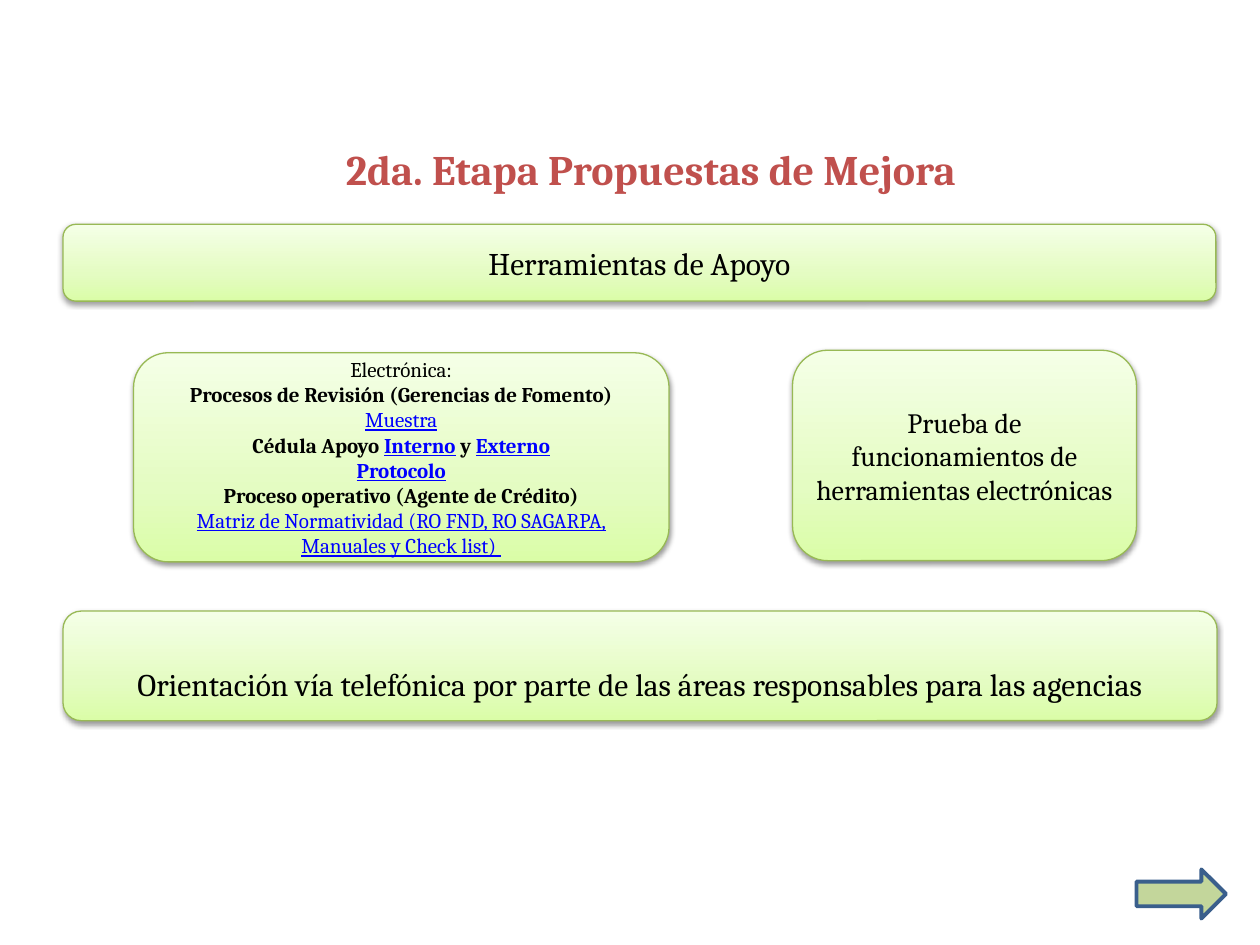
import copy
from dataclasses import dataclass

import pptx
import pptx.dml.color
import pptx.enum.shapes
import pptx.enum.text
import pptx.oxml
import pptx.oxml.ns
import pptx.util
from pptx.dml.color import RGBColor
from pptx.enum.shapes import MSO_SHAPE
from pptx.enum.text import MSO_ANCHOR, PP_ALIGN
from pptx.util import Inches

FONT = "Cambria"
RED = RGBColor(0xC0, 0x50, 0x4D)
BLACK = RGBColor(0, 0, 0)
LINK_BLUE = RGBColor(0, 0, 0xFF)
PANEL_EDGE = RGBColor(0x98, 0xB9, 0x55)
PANEL_STOPS = (
    (0, RGBColor(0xDA, 0xFD, 0xA7)),
    (0.35, RGBColor(0xE4, 0xFC, 0xC2)),
    (1, RGBColor(0xF5, 0xFF, 0xE7)),
)
ARROW_FILL = RGBColor(0xC3, 0xD6, 0x9B)
ARROW_EDGE = RGBColor(0x3A, 0x5F, 0x8C)


@dataclass
class Span:
    text: str
    bold: bool = False
    link: bool = False


@dataclass
class Panel:
    left: float
    top: float
    width: float
    height: float
    size: int
    lines: list[list[Span]]
    anchor: MSO_ANCHOR = MSO_ANCHOR.MIDDLE
    bottom_inset: float = 0.05


PANELS = [
    Panel(0.5, 1.78, 9.15, 0.61, 18, [[Span("Herramientas de Apoyo")]]),
    Panel(1.06, 2.8, 4.25, 1.66, 12, [
        [Span("Electrónica:")],
        [Span("Procesos de Revisión (Gerencias de Fomento)", bold=True)],
        [Span("Muestra", link=True)],
        [Span("Cédula Apoyo ", bold=True), Span("Interno", bold=True, link=True),
         Span(" y ", bold=True), Span("Externo", bold=True, link=True)],
        [Span("Protocolo", bold=True, link=True)],
        [Span("Proceso operativo (Agente de Crédito)", bold=True)],
        [Span("Matriz de Normatividad (RO FND, RO SAGARPA, "
              "Manuales y Check list) ", link=True)],
    ]),
    Panel(6.29, 2.78, 2.73, 1.67, 16,
          [[Span("Prueba de funcionamientos de herramientas electrónicas")]]),
    Panel(0.5, 4.85, 9.16, 0.87, 18,
          [[Span("Orientación vía telefónica por parte de las áreas "
                 "responsables para las agencias")]],
          MSO_ANCHOR.BOTTOM, 0.1),
]


def fill_gradient(shape) -> None:
    fill = shape.fill
    fill.gradient()
    fill.gradient_angle = 90
    stop_list = shape.element.spPr.find(".//" + pptx.oxml.ns.qn("a:gsLst"))
    stop_list.append(copy.deepcopy(stop_list[0]))
    for stop, (position, color) in zip(fill.gradient_stops, PANEL_STOPS):
        stop.position = position
        stop.color.rgb = color


def add_soft_shadow(shape) -> None:
    shape.shadow.inherit = False
    effects = shape.element.spPr.find(pptx.oxml.ns.qn("a:effectLst"))
    effects.append(pptx.oxml.parse_xml(
        f'<a:outerShdw {pptx.oxml.ns.nsdecls("a")} blurRad="{pptx.util.Pt(3.1)}" '
        f'dist="{pptx.util.Pt(1.6)}" dir="5400000" rotWithShape="0">'
        '<a:srgbClr val="000000"><a:alpha val="38000"/></a:srgbClr></a:outerShdw>'))


def add_panel(page, panel: Panel) -> None:
    box = page.shapes.add_shape(
        MSO_SHAPE.ROUNDED_RECTANGLE, Inches(panel.left), Inches(panel.top),
        Inches(panel.width), Inches(panel.height))
    fill_gradient(box)
    box.line.color.rgb = PANEL_EDGE
    box.line.width = pptx.util.Pt(0.75)
    add_soft_shadow(box)
    frame = box.text_frame
    frame.word_wrap = True
    frame.vertical_anchor = panel.anchor
    frame.margin_bottom = Inches(panel.bottom_inset)
    for index, line in enumerate(panel.lines):
        para = frame.add_paragraph() if index else frame.paragraphs[0]
        para.alignment = PP_ALIGN.CENTER
        for span in line:
            run = para.add_run()
            run.text = span.text
            run.font.name = FONT
            run.font.size = pptx.util.Pt(panel.size)
            run.font.bold = span.bold
            run.font.underline = span.link
            run.font.color.rgb = LINK_BLUE if span.link else BLACK


def add_title(page) -> None:
    title = page.shapes.title
    title.left, title.top = Inches(0.99), Inches(1.09)
    title.width, title.height = Inches(8.35), Inches(0.5)
    title.text_frame.text = "2da. Etapa Propuestas de Mejora"
    title.text_frame.vertical_anchor = MSO_ANCHOR.MIDDLE
    para = title.text_frame.paragraphs[0]
    para.alignment = PP_ALIGN.CENTER
    font = para.runs[0].font
    font.name = FONT
    font.size = pptx.util.Pt(24)
    font.bold = True
    font.color.rgb = RED


def add_next_arrow(page) -> None:
    arrow = page.shapes.add_shape(
        MSO_SHAPE.RIGHT_ARROW, Inches(9.02), Inches(6.9), Inches(0.71), Inches(0.39))
    arrow.shadow.inherit = False
    arrow.fill.solid()
    arrow.fill.fore_color.rgb = ARROW_FILL
    arrow.line.color.rgb = ARROW_EDGE
    arrow.line.width = pptx.util.Pt(2.25)


def main() -> None:
    deck = pptx.Presentation()
    deck.slide_width, deck.slide_height = Inches(10), Inches(7.5)
    page = deck.slides.add_slide(deck.slide_layouts.get_by_name("Title Only"))
    add_title(page)
    for panel in PANELS:
        add_panel(page, panel)
    add_next_arrow(page)
    deck.save("out.pptx")


if __name__ == "__main__":
    main()
